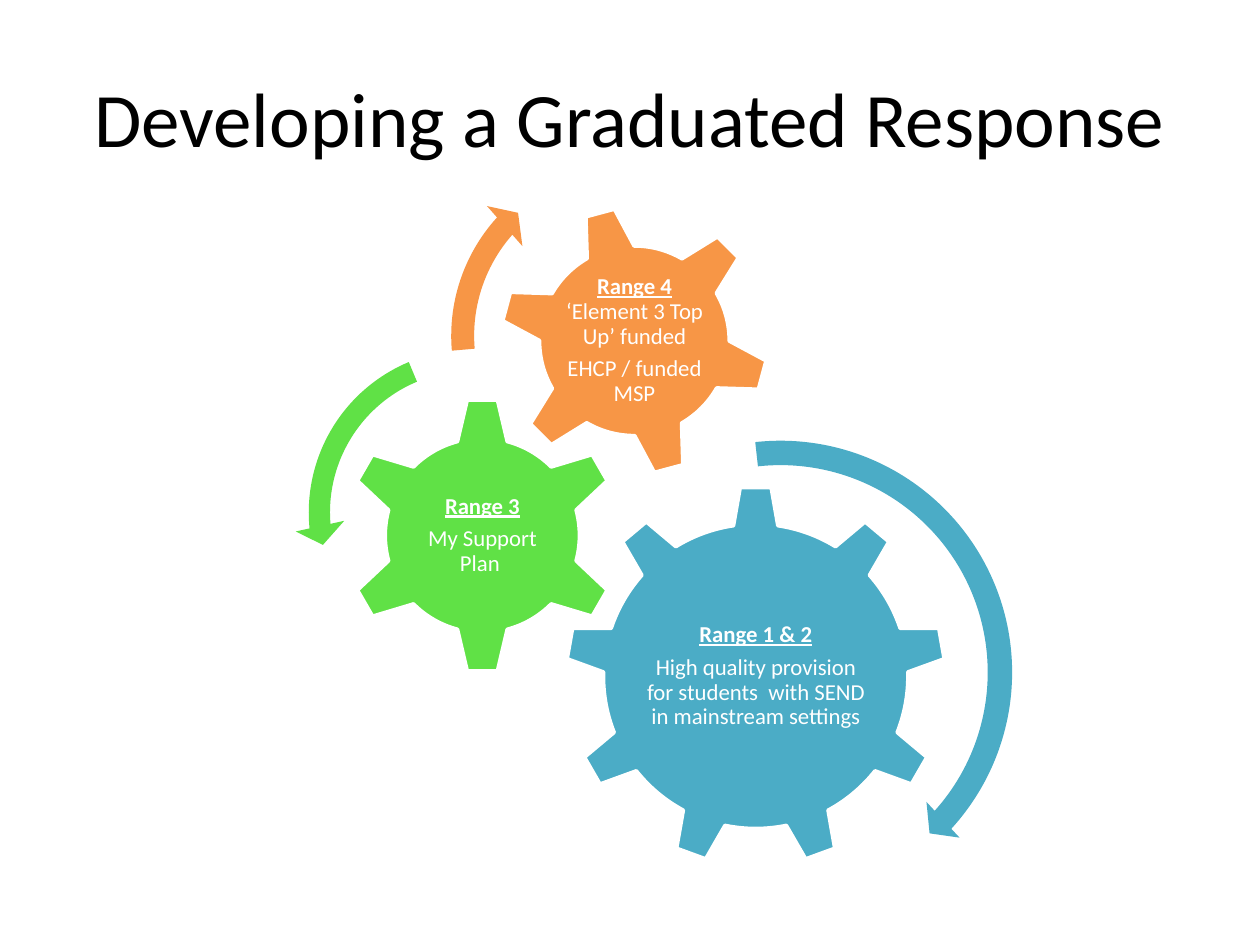
from pptx import Presentation
from pptx.util import Cm, Pt
from pptx.dml.color import RGBColor
from pptx.enum.shapes import MSO_SHAPE
from pptx.enum.text import MSO_ANCHOR, PP_ALIGN

THEME = {
    "font": "Calibri",
    "black": "000000", "white": "FFFFFF",
    "blue": "4BACC6", "green": "60E146", "orange": "F79646",
    "title": 44, "body": 13, "edge": 2,
}
HEAD = {"bold": True, "underline": True}
BODY = {"bold": False, "underline": False}

TITLE = [[("Developing a Graduated Response", BODY)]]
GEARS = [
    {"kind": MSO_SHAPE.GEAR_9, "hue": "blue", "at": (11.4, 9.8), "size": 7.67,
     "turn": 0, "area": (4.6, 3.94), "text": [
         [("Range 1 & 2", HEAD)],
         [("High quality provision for students  with SEND in mainstream settings", BODY)]]},
    {"kind": MSO_SHAPE.GEAR_6, "hue": "green", "at": (6.93, 8), "size": 5.59,
     "turn": 0, "area": (2.77, 2.77), "text": [
         [("Range 3", HEAD)],
         [("My Support Plan ", BODY)]]},
    {"kind": MSO_SHAPE.GEAR_6, "hue": "orange", "at": (10.06, 4.14), "size": 5.46,
     "turn": 345, "area": (3.07, 3.07), "text": [
         [("Range 4 ", HEAD), ("‘Element 3 Top Up’ funded", BODY)],
         [("EHCP / funded MSP", BODY)]]},
]
ARROWS = [
    (MSO_SHAPE.CIRCULAR_ARROW, "blue", (10.82, 8.64), 9.83,
     (0.05, 2.99, 25.33, 158.25, 0.05)),
    (MSO_SHAPE.LEFT_CIRCULAR_ARROW, "green", (5.94, 6.76), 7.14,
     (0.06, 4.3, 104.89, 148.38, 0.07)),
    (MSO_SHAPE.CIRCULAR_ARROW, "orange", (8.79, 2.92), 7.7,
     (0.06, 3.94, 133.14, 105.08, 0.07)),
]


def tint(name):
    return RGBColor.from_string(THEME[name])


def apply(item, form):
    for key, value in form.items():
        setattr(item, key, value)


def write(shapes, at, area, paras, size, hue, inset, form):
    frame = shapes.add_textbox(*map(Cm, at + area)).text_frame
    sides = ("left", "top", "right", "bottom")
    apply(frame, {"word_wrap": True, "vertical_anchor": MSO_ANCHOR.MIDDLE}
          | {f"margin_{side}": Cm(inset) for side in sides})
    for i, runs in enumerate(paras):
        para = frame.add_paragraph() if i else frame.paragraphs[0]
        apply(para, {"alignment": PP_ALIGN.CENTER} | form)
        for text, style in runs:
            run = para.add_run()
            run.text = text
            apply(run.font, {"name": THEME["font"], "size": Pt(THEME[size])} | style)
            run.font.color.rgb = tint(hue)


def draw(shapes, kind, hue, at, size):
    shape = shapes.add_shape(kind, *map(Cm, at + (size, size)))
    shape.shadow.inherit = False
    shape.fill.solid()
    shape.fill.fore_color.rgb = tint(hue)
    return shape


def main():
    deck = Presentation()
    apply(deck, {"slide_width": Cm(25.4), "slide_height": Cm(19.05)})
    slide = deck.slides.add_slide(deck.slide_layouts[6])
    write(slide.shapes, (1.27, 0.76), (22.86, 3.18), TITLE,
          "title", "black", 0.25, {})

    art = slide.shapes.add_group_shape().shapes
    tight = {"line_spacing": 0.9, "space_after": Pt(0.35 * THEME["body"])}
    for gear in GEARS:
        at, size, area = gear["at"], gear["size"], gear["area"]
        shape = draw(art, gear["kind"], gear["hue"], at, size)
        shape.rotation = gear["turn"]
        shape.line.color.rgb = tint("white")
        shape.line.width = Pt(THEME["edge"])
        spot = tuple(p + (size - a) / 2 for p, a in zip(at, area))
        write(art, spot, area, gear["text"], "body", "white", 0.05, tight)

    for kind, hue, at, size, bends in ARROWS:
        shape = draw(art, kind, hue, at, size)
        shape.line.fill.background()
        for i, bend in enumerate(bends):
            shape.adjustments[i] = bend

    deck.save("out.pptx")


if __name__ == "__main__":
    main()
